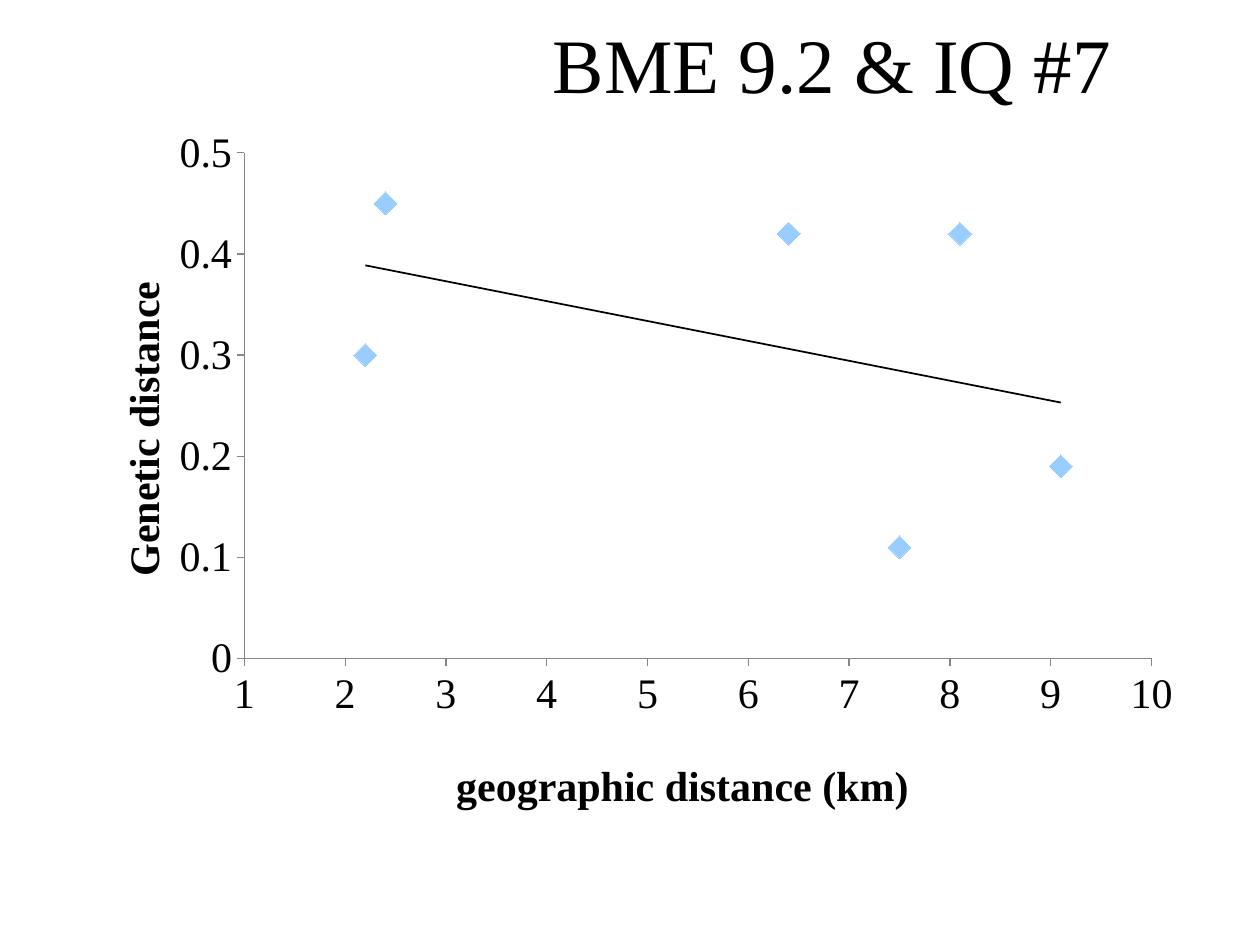
import lxml.etree
import pptx
import pptx.chart.data
import pptx.dml.color
import pptx.enum.chart
import pptx.enum.text
import pptx.oxml
import pptx.oxml.ns
import pptx.util

Pt = pptx.util.Pt
qn = pptx.oxml.ns.qn
FACE = "Times New Roman"


def color(value):
    return pptx.dml.color.RGBColor.from_string(value)


def place(parent, index, **settings):
    layout = parent.find(qn("c:layout"))
    if layout is None:
        layout = lxml.etree.Element(qn("c:layout"))
        parent.insert(index, layout)
    manual = lxml.etree.SubElement(layout, qn("c:manualLayout"))
    for tag, value in settings.items():
        lxml.etree.SubElement(manual, qn("c:" + tag)).set("val", str(value))


deck = pptx.Presentation()
deck.slide_width = Pt(720)
deck.slide_height = Pt(540)
slide = deck.slides.add_slide(deck.slide_layouts[6])

heading = slide.shapes.add_textbox(Pt(267), Pt(4.5), Pt(417), Pt(62.5)).text_frame
heading.word_wrap = True
heading.vertical_anchor = pptx.enum.text.MSO_ANCHOR.MIDDLE
heading_line = heading.paragraphs[0]
heading_line.alignment = pptx.enum.text.PP_ALIGN.CENTER
heading_run = heading_line.add_run()
heading_run.text = "BME 9.2 & IQ #7"
heading_run.font.name = FACE
heading_run.font.size = Pt(44)
heading_run.font.color.rgb = color("000000")

distances = pptx.chart.data.XyChartData()
pairs = distances.add_series("Series 1")
for kilometres, genetic in [(9.1, 0.19), (2.2, 0.3), (8.1, 0.42),
                            (6.4, 0.42), (7.5, 0.11), (2.4, 0.45)]:
    pairs.add_data_point(kilometres, genetic)

scatter = slide.shapes.add_chart(
    pptx.enum.chart.XL_CHART_TYPE.XY_SCATTER,
    Pt(36), Pt(67), Pt(648), Pt(407), distances).chart
scatter.has_legend = False
scatter.has_title = False
scatter.font.name = FACE
scatter.font.size = Pt(24)
scatter.font.color.rgb = color("000000")
scatter.plots[0].vary_by_categories = False
place(scatter.plots[0]._element.getparent(), 0, layoutTarget="inner",
      xMode="edge", yMode="edge", x=0.16, y=0.05, w=0.8, h=0.71)

populations = scatter.plots[0].series[0]
populations.format.line.fill.background()
populations.marker.style = pptx.enum.chart.XL_MARKER_STYLE.DIAMOND
populations.marker.size = 13
populations.marker.format.fill.solid()
populations.marker.format.fill.fore_color.rgb = color("99CCFF")
populations.marker.format.line.fill.background()

trend = pptx.oxml.parse_xml(
    '<c:trendline xmlns:c="http://schemas.openxmlformats.org/drawingml/2006/chart"'
    ' xmlns:a="http://schemas.openxmlformats.org/drawingml/2006/main">'
    '<c:spPr><a:ln w="12700"><a:solidFill><a:srgbClr val="000000"/></a:solidFill></a:ln></c:spPr>'
    '<c:trendlineType val="linear"/><c:dispRSqr val="0"/><c:dispEq val="0"/></c:trendline>')
populations._element.find(qn("c:xVal")).addprevious(trend)

for axis, caption, low, high, step, number_format, left, top, turn in [
    (scatter.category_axis, "geographic distance (km)", 1, 10, 1, "General", 0.34, 0.89, 0),
    (scatter.value_axis, "Genetic distance", 0, 0.5, 0.1, "General", 0.04, 0.22, -5400000),
]:
    axis.minimum_scale = low
    axis.maximum_scale = high
    axis.major_unit = step
    axis.has_major_gridlines = False
    axis.major_tick_mark = pptx.enum.chart.XL_TICK_MARK.OUTSIDE
    axis.tick_labels.number_format = number_format
    axis.tick_labels.number_format_is_linked = False
    axis.format.line.color.rgb = color("868686")
    axis.format.line.width = Pt(0.75)
    caption_frame = axis.axis_title.text_frame
    caption_run = caption_frame.paragraphs[0].add_run()
    caption_run.text = caption
    caption_run.font.name = FACE
    caption_run.font.size = Pt(24)
    caption_run.font.bold = True
    caption_run.font.color.rgb = color("000000")
    caption_frame._txBody.find(qn("a:bodyPr")).set("rot", str(turn))
    place(axis.axis_title._element, 1, xMode="edge", yMode="edge", x=left, y=top)

deck.save("out.pptx")
